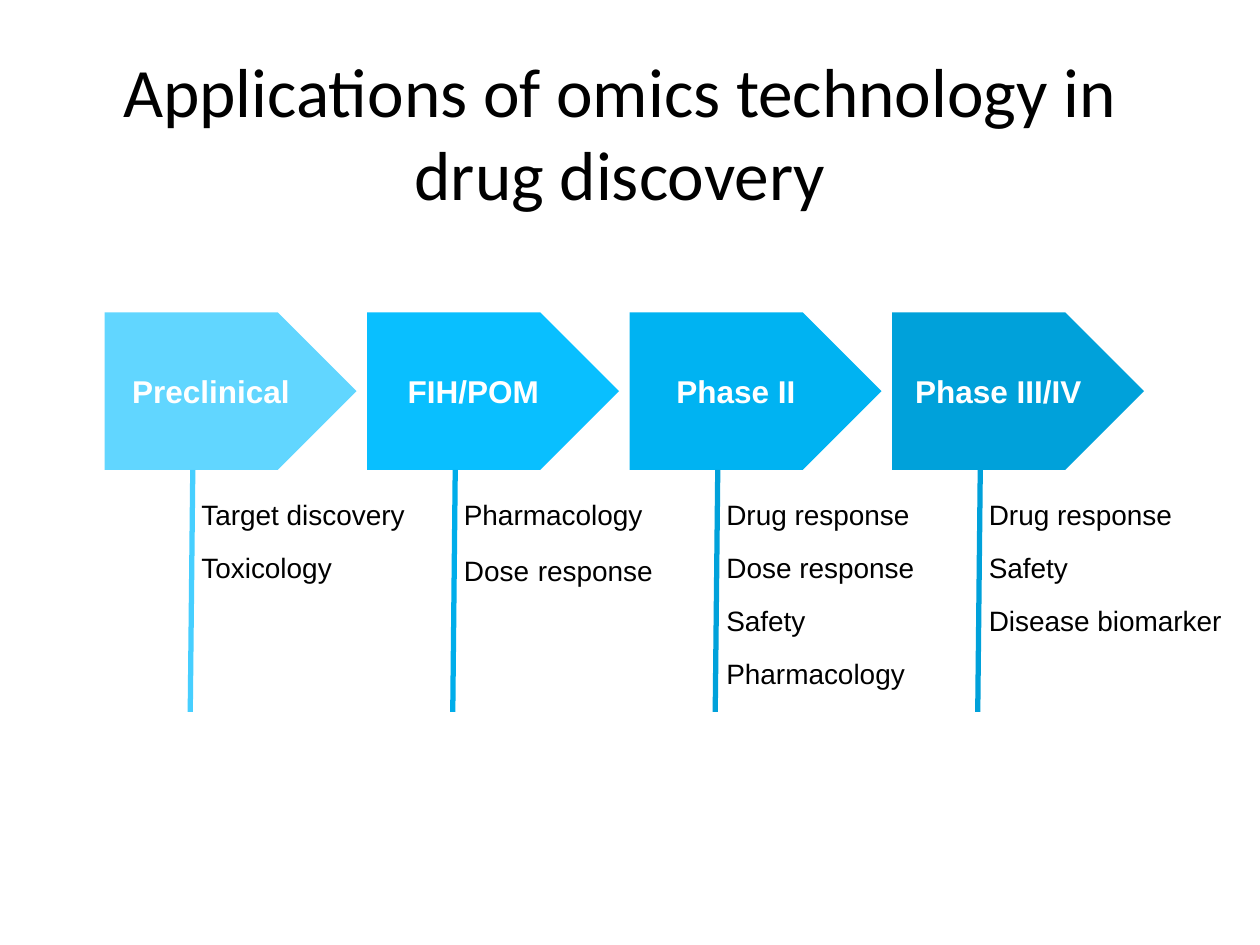
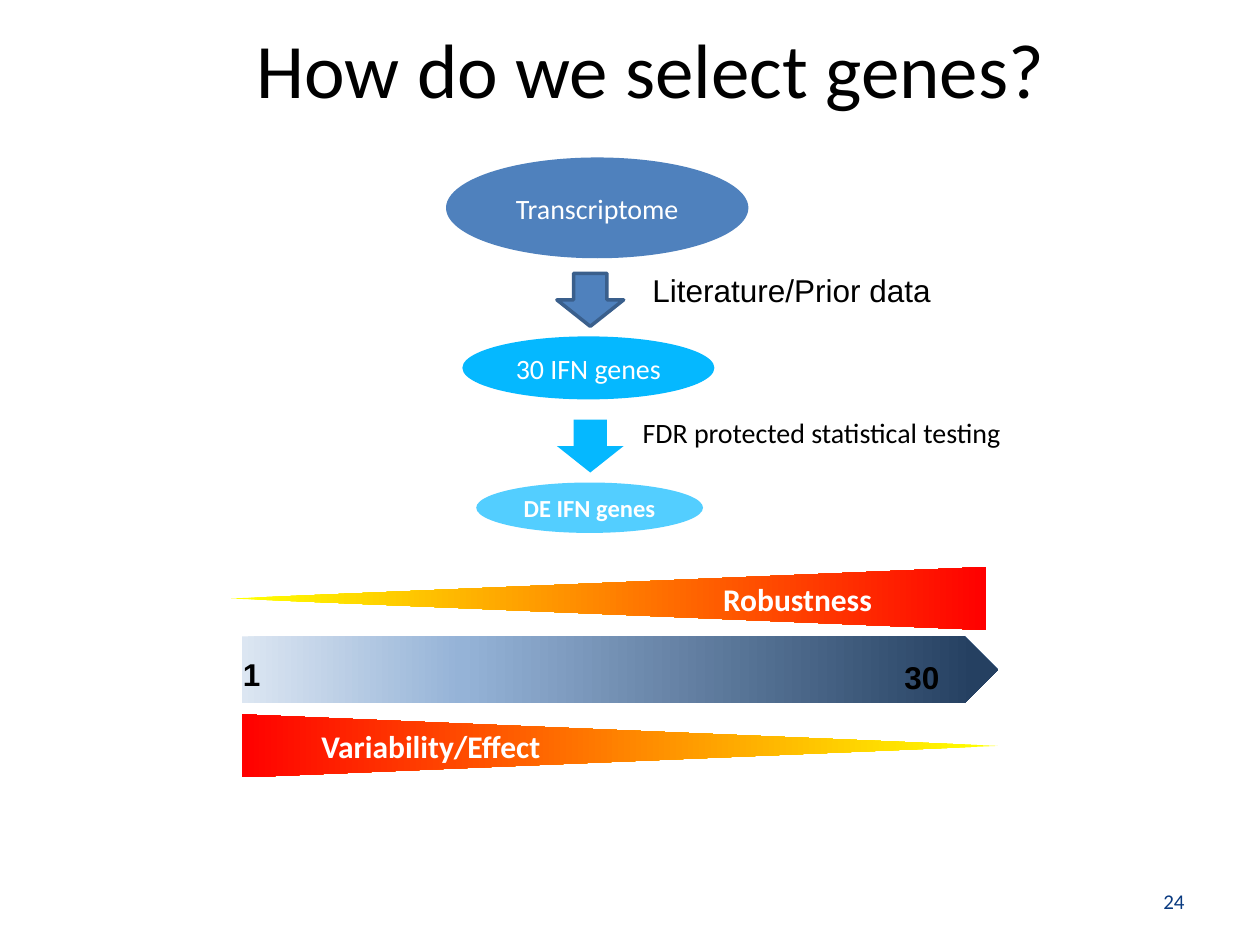
from dataclasses import dataclass
from typing import NamedTuple, Optional

from lxml.etree import SubElement
from pptx import Presentation
from pptx.dml.color import RGBColor
from pptx.enum.shapes import MSO_CONNECTOR as Line, MSO_SHAPE as Geo
from pptx.enum.text import MSO_ANCHOR as Anchor, MSO_AUTO_SIZE as AutoSize, PP_ALIGN as Align
from pptx.oxml.ns import qn
from pptx.util import Inches, Pt


@dataclass(frozen=True)
class Theme:
    heading_font: str = "Calibri"
    label_font: str = "Arial"
    ink: str = "000000"
    white: str = "FFFFFF"
    steel: str = "4F81BD"
    steel_edge: str = "3A5F8C"
    azure: str = "05B8FF"
    sky: str = "53CEFF"
    page_number: str = "093A80"
    bar: tuple = ((0, "DCE6F2"), (29, "95B3D7"), (97, "254061"))
    heat: tuple = ((2, "FFFF00"), (100, "FF0000"))
    long_title: float = 39.6
    title: float = 44
    large: float = 18
    medium: float = 16
    small: float = 14
    footer: float = 12


THEME = Theme()


class Box(NamedTuple):
    left: float
    top: float
    width: float
    height: float

    def lengths(self) -> list:
        return [Inches(value) for value in self]


class Run(NamedTuple):
    text: str
    size: float = THEME.medium
    font: str = THEME.label_font
    color: str = THEME.ink
    bold: bool = False


class Application(NamedTuple):
    width: float
    runs: tuple


class Phase(NamedTuple):
    name: str
    fill: str
    stem: str
    applications: tuple


class Block(NamedTuple):
    geometry: int
    box: Box
    fill: str
    caption: Optional[Run] = None
    edge: Optional[str] = None


class Wedge(NamedTuple):
    caption: str
    box: Box
    rotation: int
    text_direction: str


DRUG_RESPONSE = Application(1.67, (Run("Drug response"),))
DOSE_RESPONSE = Application(1.71, (Run("Dose response"),))
DOSE_RESPONSE_WIDE = Application(1.78, (Run("Dose"), Run(" ", THEME.large), Run("response")))
PHARMACOLOGY = Application(1.63, (Run("Pharmacology"),))
SAFETY = Application(0.84, (Run("Safety"),))
TOXICOLOGY = Application(1.25, (Run("Toxicology"),))
TARGET_DISCOVERY = Application(1.84, (Run("Target discovery"),))
DISEASE_BIOMARKER = Application(2.07, (Run("Disease biomarker"),))

PHASES = (
    Phase("Preclinical", "61D6FF", "47CFFF", (TARGET_DISCOVERY, TOXICOLOGY)),
    Phase("FIH/POM", "09BFFF", "00ADEA", (PHARMACOLOGY, DOSE_RESPONSE_WIDE)),
    Phase("Phase II", "00B3F2", "00A1DA",
          (DRUG_RESPONSE, DOSE_RESPONSE, SAFETY, PHARMACOLOGY)),
    Phase("Phase III/IV", "00A1DA", "00A1DA",
          (DRUG_RESPONSE, SAFETY, DISEASE_BIOMARKER)),
)
FIRST_PHASE = Box(0.83, 2.48, 2, 1.25)
PHASE_PITCH = 25 / 12
STEM_BOTTOM = 5.65
FIRST_ROW, ROW_PITCH = 3.9, 0.42


def gene_set(name: str, size: float, bold: bool = False) -> Run:
    return Run(name, size, THEME.heading_font, THEME.white, bold)


FUNNEL = (
    Block(Geo.OVAL, Box(3.54, 1.25, 2.4, 0.8), THEME.steel,
          gene_set("Transcriptome", THEME.medium)),
    Block(Geo.DOWN_ARROW, Box(4.42, 2.17, 0.53, 0.42), THEME.steel, edge=THEME.steel_edge),
    Block(Geo.OVAL, Box(3.67, 2.67, 2, 0.5), THEME.azure,
          gene_set("30 IFN genes", THEME.medium)),
    Block(Geo.DOWN_ARROW, Box(4.42, 3.33, 0.53, 0.42), THEME.azure),
    Block(Geo.OVAL, Box(3.78, 3.83, 1.8, 0.4), THEME.sky,
          gene_set("DE IFN genes", THEME.small, bold=True)),
)
WEDGES = (
    Wedge("Robustness", Box(4.58, 1.75, 0.5, 6), 270, "vert"),
    Wedge("Variability/Effect", Box(4.67, 2.92, 0.5, 6), 90, "vert270"),
)
GENE_BAR = Box(1.92, 5.05, 6, 0.53)


def rgb(color: str) -> RGBColor:
    return RGBColor.from_string(color)


def write(paragraph, *runs: Run) -> None:
    for item in runs:
        run = paragraph.add_run()
        run.text = item.text
        run.font.size = Pt(item.size)
        run.font.name = item.font
        run.font.bold = item.bold
        run.font.color.rgb = rgb(item.color)


def place(shape, box: Box) -> None:
    shape.left, shape.top, shape.width, shape.height = box.lengths()


def set_title(slide, box: Box, text: str, size: float) -> None:
    title = slide.shapes.title
    place(title, box)
    title.text_frame.auto_size = AutoSize.NONE
    title.text_frame.vertical_anchor = Anchor.MIDDLE
    paragraph = title.text_frame.paragraphs[0]
    paragraph.alignment = Align.CENTER
    write(paragraph, Run(text, size, THEME.heading_font))


def add_plain(slide, geometry: int, box: Box):
    """Add a preset shape without shadow or outline."""
    shape = slide.shapes.add_shape(geometry, *box.lengths())
    shape.shadow.inherit = False
    shape.line.fill.background()
    return shape


def add_caption(shape, caption: Run) -> None:
    shape.text_frame.vertical_anchor = Anchor.MIDDLE
    paragraph = shape.text_frame.paragraphs[0]
    paragraph.alignment = Align.CENTER
    write(paragraph, caption)


def add_block(slide, block: Block) -> None:
    shape = add_plain(slide, block.geometry, block.box)
    shape.fill.solid()
    shape.fill.fore_color.rgb = rgb(block.fill)
    if block.edge:
        shape.line.color.rgb = rgb(block.edge)
        shape.line.width = Pt(2)
    if block.caption:
        add_caption(shape, block.caption)


def fill_gradient(shape, stops: tuple, angle: int) -> None:
    """Fill with (percent, colour) stops; the angle runs counter-clockwise."""
    shape.fill.gradient()
    shape.fill.gradient_angle = angle
    stop_list = next(shape._element.spPr.iter(qn("a:gsLst")))
    for default_stop in list(stop_list):
        stop_list.remove(default_stop)
    for percent, color in stops:
        stop = SubElement(stop_list, qn("a:gs"), pos=str(percent * 1000))
        SubElement(stop, qn("a:srgbClr"), val=color)


def add_label(slide, box: Box, *runs: Run) -> None:
    frame = slide.shapes.add_textbox(*box.lengths()).text_frame
    frame.word_wrap = False
    frame.auto_size = AutoSize.SHAPE_TO_FIT_TEXT
    write(frame.paragraphs[0], *runs)


def add_stem(slide, left: float, color: str) -> None:
    top = FIRST_PHASE.top + FIRST_PHASE.height
    ends = (left + 0.7, top, left + 0.68, STEM_BOTTOM)
    stem = slide.shapes.add_connector(Line.STRAIGHT, *map(Inches, ends))
    stem.line.color.rgb = rgb(color)
    stem.line.width = Pt(3)
    SubElement(stem._element.spPr, qn("a:effectLst"))


def add_phase(slide, index: int, phase: Phase) -> None:
    left = FIRST_PHASE.left + index * PHASE_PITCH
    name = Run(phase.name, THEME.large, THEME.label_font, THEME.white, True)
    add_block(slide, Block(Geo.PENTAGON, FIRST_PHASE._replace(left=left), phase.fill, name))
    add_stem(slide, left, phase.stem)
    for row, application in enumerate(phase.applications):
        top = FIRST_ROW + row * ROW_PITCH
        add_label(slide, Box(left + 0.67, top, application.width, 0.37), *application.runs)


def add_wedge(slide, wedge: Wedge) -> None:
    shape = add_plain(slide, Geo.ISOSCELES_TRIANGLE, wedge.box)
    shape.rotation = wedge.rotation
    fill_gradient(shape, THEME.heat, 270)
    shape.text_frame._txBody.bodyPr.set("vert", wedge.text_direction)
    add_caption(shape, gene_set(wedge.caption, THEME.large, bold=True))


def add_test_note(slide) -> None:
    note = slide.placeholders[1]
    place(note, Box(5, 3.25, 3.83, 0.64))
    note.text_frame.auto_size = AutoSize.NONE
    paragraph = note.text_frame.paragraphs[0]
    properties = paragraph._p.get_or_add_pPr()
    properties.set("marL", "0")
    properties.set("indent", "0")
    SubElement(properties, qn("a:buNone"))
    write(paragraph, Run("FDR protected statistical testing", font=THEME.heading_font))


def add_page_number(slide, number: str) -> None:
    frame = slide.shapes.add_textbox(*Box(7.17, 6.95, 2.33, 0.4).lengths()).text_frame
    frame.word_wrap = True
    frame.vertical_anchor = Anchor.MIDDLE
    frame.paragraphs[0].alignment = Align.RIGHT
    write(frame.paragraphs[0],
          Run(number, THEME.footer, THEME.heading_font, THEME.page_number))


def build_applications(deck) -> None:
    slide = deck.slides.add_slide(deck.slide_layouts.get_by_name("Title Only"))
    set_title(slide, Box(0.42, 0.42, 9, 1.25),
              "Applications of omics technology in drug discovery", THEME.long_title)
    for index, phase in enumerate(PHASES):
        add_phase(slide, index, phase)


def build_gene_selection(deck) -> None:
    slide = deck.slides.add_slide(deck.slide_layouts.get_by_name("Title and Content"))
    set_title(slide, Box(0.33, 0.08, 9.67, 0.92), "How do we select genes?", THEME.title)
    add_test_note(slide)
    gene_bar = add_plain(slide, Geo.PENTAGON, GENE_BAR)
    fill_gradient(gene_bar, THEME.bar, 0)
    for count, box in (("1", Box(1.83, 5.15, 0.34, 0.4)), ("30", Box(7.08, 5.17, 0.48, 0.4))):
        add_label(slide, box, Run(count, THEME.large, bold=True))
    for wedge in WEDGES:
        add_wedge(slide, wedge)
    for block in FUNNEL:
        add_block(slide, block)
    add_label(slide, Box(5.08, 2.1, 2.43, 0.4), Run("Literature/Prior data", THEME.large))
    add_page_number(slide, "24")


def main() -> None:
    deck = Presentation()
    deck.slide_width, deck.slide_height = Inches(10), Inches(7.5)
    build_applications(deck)
    build_gene_selection(deck)
    deck.save("out.pptx")


if __name__ == "__main__":
    main()
